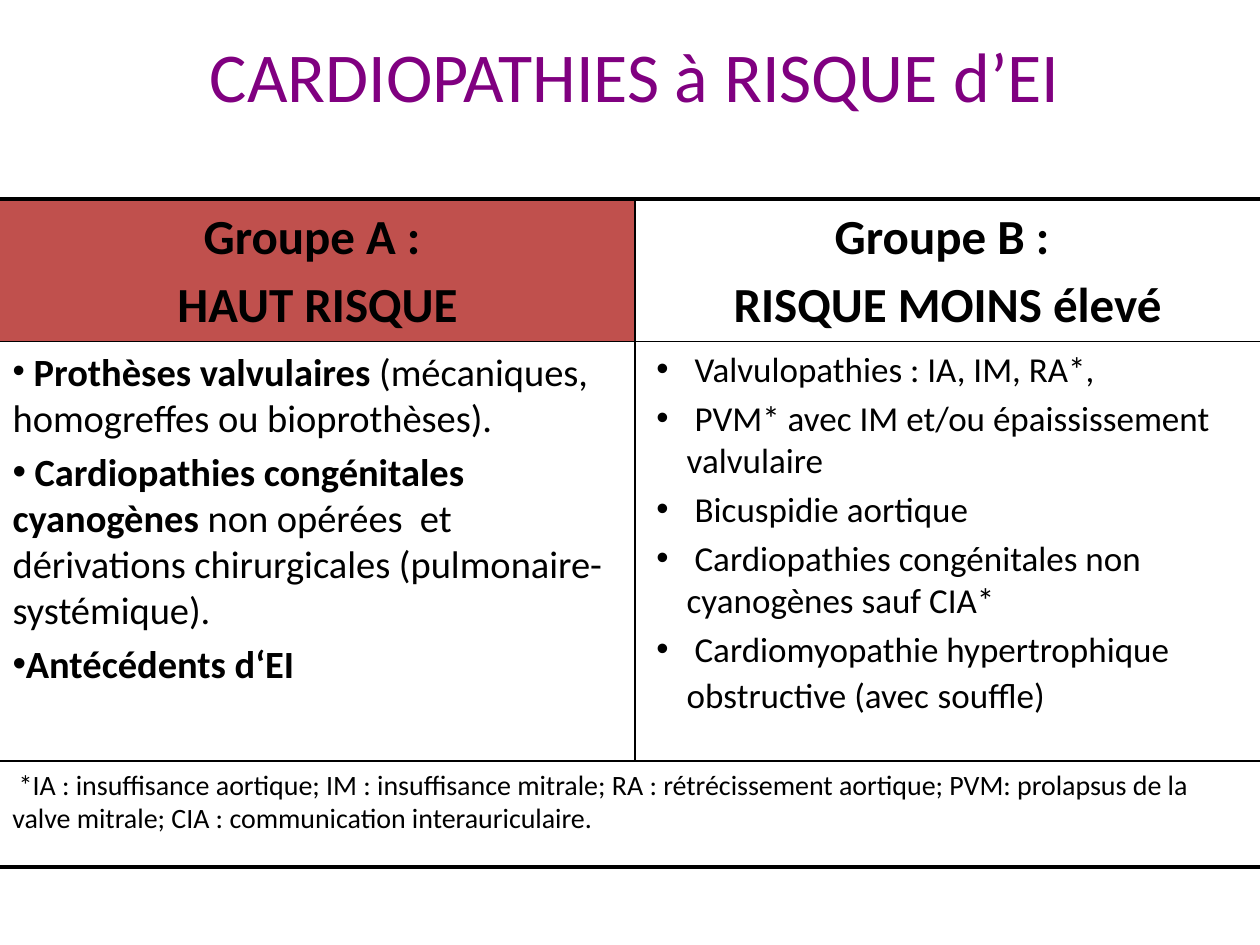
"""Build the slide on heart conditions at risk of endocarditis."""
import lxml.etree
import pptx
import pptx.dml.color
import pptx.enum.shapes
import pptx.enum.text
import pptx.oxml.ns
import pptx.util

Inches = pptx.util.Inches
Pt = pptx.util.Pt
qn = pptx.oxml.ns.qn

WIDTH, SPLIT = 10, 5.04
TOP, HEADER_END, BODY_END, BOTTOM = 1.58, 2.71, 6.04, 6.88
BLACK, PURPLE, RED, WHITE = "000000", "800080", "C0504D", "FFFFFF"

HIGH_RISK_HEADING = ["Groupe A : ", "HAUT RISQUE"]
LOWER_RISK_HEADING = ["Groupe B : ", "RISQUE MOINS élevé"]
HIGH_RISK = [
    [(" ", {"bold": True, "size": 20, "font": "Times New Roman"}),
     ("Prothèses valvulaires", {"bold": True}),
     (" (mécaniques, homogreffes ou bioprothèses).", {})],
    [(" ", {}),
     ("Cardiopathies congénitales cyanogènes", {"bold": True}),
     (" non opérées  et dérivations chirurgicales (pulmonaire-systémique).", {})],
    [("Antécédents d‘EI", {"bold": True})],
]
LOWER_RISK = [
    " Valvulopathies : IA, IM, RA*,",
    " PVM* avec IM et/ou épaississement valvulaire",
    " Bicuspidie aortique",
    " Cardiopathies congénitales non cyanogènes sauf CIA*",
    [(" Cardiomyopathie hypertrophique obstructive (avec", {}),
     (" ", {"size": 22}), ("souffle)", {})],
]
ABBREVIATIONS = [
    " *IA : insuffisance aortique; IM : insuffisance mitrale; RA : rétrécissement "
    "aortique; PVM: prolapsus de la valve mitrale; CIA : communication interauriculaire."
]


def color(hex_code):
    """Return the colour for a hex string."""
    return pptx.dml.color.RGBColor.from_string(hex_code)


def place(shape, left, top, width, height):
    """Position and size a shape in inches."""
    shape.left, shape.top = Inches(left), Inches(top)
    shape.width, shape.height = Inches(width), Inches(height)


def add_bullet(paragraph, margin, indent):
    """Give a paragraph a round bullet with its indents."""
    properties = paragraph._p.get_or_add_pPr()
    properties.set("marL", str(Inches(margin)))
    properties.set("indent", str(Inches(indent)))
    lxml.etree.SubElement(properties, qn("a:buFont")).set("typeface", "Arial")
    lxml.etree.SubElement(properties, qn("a:buChar")).set("char", "•")


def write(shape, paragraphs, size, hex_code=BLACK, font="Calibri", bold=False,
          align=pptx.enum.text.PP_ALIGN.LEFT, bullet=None):
    """Fill a shape with paragraphs given as strings or lists of runs."""
    frame = shape.text_frame
    frame.word_wrap = True
    frame.auto_size = pptx.enum.text.MSO_AUTO_SIZE.NONE
    frame.vertical_anchor = pptx.enum.text.MSO_ANCHOR.TOP
    for index, content in enumerate(paragraphs):
        paragraph = frame.add_paragraph() if index else frame.paragraphs[0]
        paragraph.alignment = align
        paragraph.space_before = Pt(size * 0.2)
        if bullet:
            add_bullet(paragraph, *bullet)
        for text, look in [(content, {})] if isinstance(content, str) else content:
            run = paragraph.add_run()
            run.text = text
            run.font.name = look.get("font", font)
            run.font.size = Pt(look.get("size", size))
            run.font.bold = look.get("bold", bold)
            run.font.color.rgb = color(hex_code)


def add_panel(slide, box, paragraphs, fill=None, **look):
    """Add a rectangle or plain text box holding text."""
    if fill:
        panel = slide.shapes.add_shape(
            pptx.enum.shapes.MSO_SHAPE.RECTANGLE, *map(Inches, box))
        panel.shadow.inherit = False
        panel.fill.solid()
        panel.fill.fore_color.rgb = color(fill)
        panel.line.fill.background()
    else:
        panel = slide.shapes.add_textbox(*map(Inches, box))
    write(panel, paragraphs, **look)


def add_rule(slide, start, end, weight):
    """Draw a straight black rule between two points."""
    rule = slide.shapes.add_connector(
        pptx.enum.shapes.MSO_CONNECTOR.STRAIGHT, *map(Inches, start + end))
    rule.line.color.rgb = color(BLACK)
    rule.line.width = Pt(weight)
    lxml.etree.SubElement(rule._element.spPr, qn("a:effectLst"))


def main():
    """Build and save the slide."""
    deck = pptx.Presentation()
    deck.slide_width, deck.slide_height = Inches(WIDTH), Inches(7.5)
    slide = deck.slides.add_slide(deck.slide_layouts.get_by_name("Two Content"))
    title, high_risk, lower_risk = slide.placeholders
    center = pptx.enum.text.PP_ALIGN.CENTER
    right_width = WIDTH - SPLIT
    header_height, body_height = HEADER_END - TOP, BODY_END - HEADER_END

    place(title, 0.51, 0.21, 9.06, 0.77)
    title.fill.solid()
    title.fill.fore_color.rgb = color(WHITE)
    write(title, ["CARDIOPATHIES à RISQUE d’EI"], 40, PURPLE, align=center)

    heading = {"size": 28, "bold": True, "align": center}
    add_panel(slide, (0, TOP, SPLIT, header_height), HIGH_RISK_HEADING, RED, **heading)
    add_panel(slide, (SPLIT, TOP, right_width, header_height),
              LOWER_RISK_HEADING, **heading)

    place(high_risk, 0, HEADER_END, SPLIT, body_height)
    write(high_risk, HIGH_RISK, 22, bullet=(0, 0))
    place(lower_risk, SPLIT, HEADER_END, right_width, body_height)
    write(lower_risk, LOWER_RISK, 20, bullet=(0.31, -0.24))
    add_panel(slide, (0, BODY_END, WIDTH, BOTTOM - BODY_END), ABBREVIATIONS, size=16)

    for height, weight in [(TOP, 2.25), (HEADER_END, 1), (BODY_END, 1), (BOTTOM, 2.25)]:
        add_rule(slide, (0, height), (WIDTH, height), weight)
    add_rule(slide, (SPLIT, TOP), (SPLIT, BODY_END), 1)
    deck.save("out.pptx")


if __name__ == "__main__":
    main()
